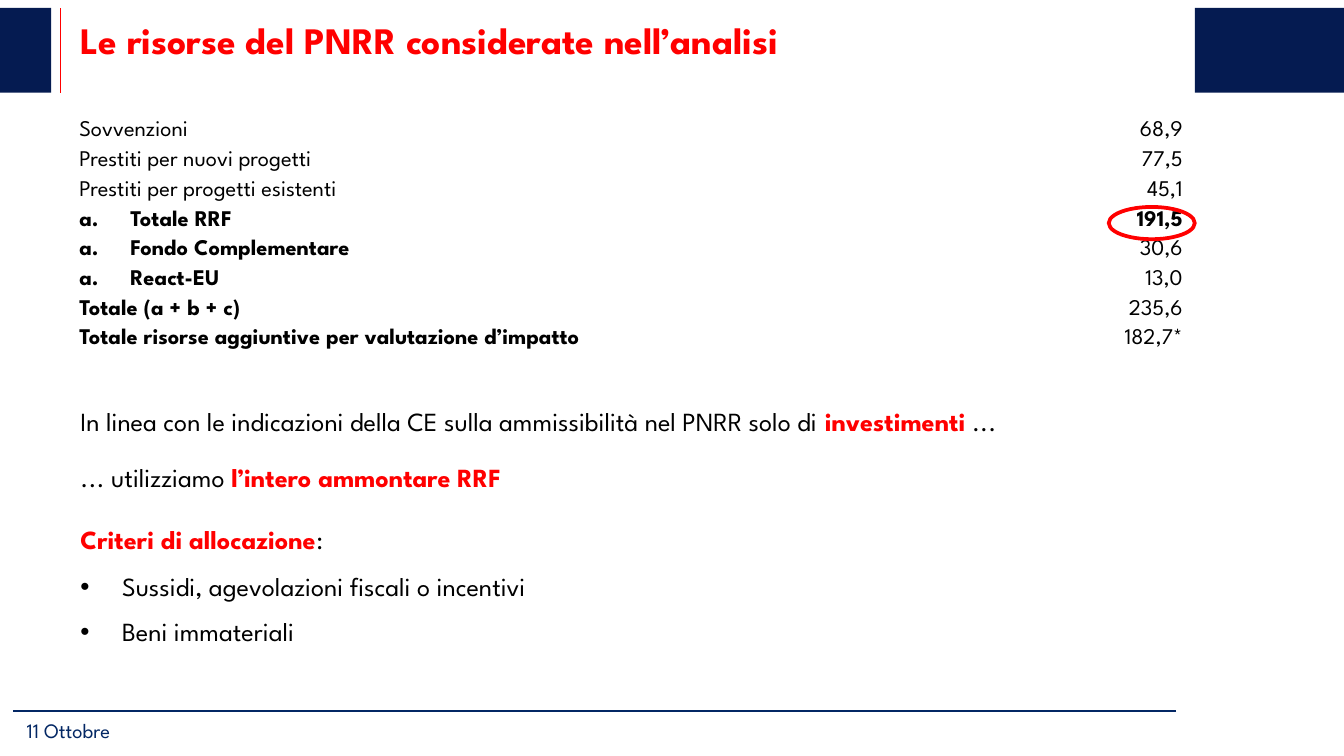
from dataclasses import dataclass

from lxml.etree import SubElement
from pptx import Presentation
from pptx.dml.color import RGBColor
from pptx.enum.shapes import MSO_CONNECTOR as CONN, MSO_SHAPE as SHAPE
from pptx.enum.text import MSO_ANCHOR as ANCHOR, PP_ALIGN as ALIGN
from pptx.oxml.ns import qn
from pptx.util import Inches, Pt


@dataclass(frozen=True)
class Theme:
    font: str = "League Spartan"
    bullet_font: str = "Arial"
    red: str = "FF0000"
    navy: str = "051B51"
    blue: str = "032764"
    black: str = "000000"
    title: int = 20
    body: int = 14
    table: int = 12
    footer: int = 11


T = Theme()


def write(p, runs, size):
    for text, color, bold in runs:
        r = p.add_run()
        r.text = text
        for name, value in {"name": T.font, "size": Pt(size), "bold": bold}.items():
            setattr(r.font, name, value)
        r.font.color.rgb = RGBColor.from_string(color)


def add_bullet(p, indent, font, tag, **attrs):
    pPr = p._p.get_or_add_pPr()
    pPr.set("marL", str(Inches(indent)))
    pPr.set("indent", str(-Inches(indent)))
    SubElement(pPr, qn("a:buFont"), typeface=font)
    SubElement(pPr, qn(tag), **attrs)


prs = Presentation()
prs.slide_width, prs.slide_height = Inches(10), Inches(10 * 9 / 16)
s = prs.slides.add_slide(prs.slide_layouts[6])

for left, width in [(8.89, 1.12), (0, 0.38)]:
    sp = s.shapes.add_shape(SHAPE.RECTANGLE, Inches(left), Inches(0.06), Inches(width), Inches(0.63))
    sp.shadow.inherit = False
    sp.fill.solid()
    sp.fill.fore_color.rgb = RGBColor.from_string(T.navy)
    sp.line.fill.background()

for x1, y1, x2, y2, color, width in [
    (0.45, 0.06, 0.45, 0.69, T.red, 1),
    (8.75, 5.29, 0.1, 5.29, T.blue, 1),
]:
    line = s.shapes.add_connector(CONN.STRAIGHT, Inches(x1), Inches(y1), Inches(x2), Inches(y2))
    line.line.color.rgb = RGBColor.from_string(color)
    line.line.width = Pt(width)
    SubElement(line._element.spPr, qn("a:effectLst"))

rows = [
    ("Sovvenzioni", "68,9"),
    ("Prestiti per nuovi progetti", "77,5"),
    ("Prestiti per progetti esistenti", "45,1"),
    ("Totale RRF", "191,5"),
    ("Fondo Complementare", "30,6"),
    ("React-EU", "13,0"),
    ("Totale (a + b + c)", "235,6"),
    ("Totale risorse aggiuntive per valutazione d’impatto", "182,7*"),
]
lettered = range(3, 6)
table = s.shapes.add_table(len(rows), 2, Inches(0.5), Inches(0.88), Inches(8.39), Inches(1.77)).table
table.first_row = table.horz_banding = False
table.columns[0].width, table.columns[1].width = Inches(4.38), Inches(4.01)
cell_format = {
    "margin_left": Inches(0.09), "margin_right": Inches(0.09),
    "margin_top": 0, "margin_bottom": 0, "vertical_anchor": ANCHOR.TOP,
}
for i, row in enumerate(rows):
    table.rows[i].height = Inches(1.77 / len(rows))
    for j, text in enumerate(row):
        cell = table.cell(i, j)
        cell.fill.background()
        for name, value in cell_format.items():
            setattr(cell, name, value)
        p = cell.text_frame.paragraphs[0]
        p.alignment = ALIGN.RIGHT if j else ALIGN.LEFT
        p.line_spacing = 1.15
        if j == 0 and i in lettered:
            add_bullet(p, 0.38, T.font, "a:buAutoNum", type="alphaLcPeriod")
        bold = i == 3 if j else i >= 3
        write(p, [(text, T.black, bold)], T.table)

sp = s.shapes.add_shape(SHAPE.OVAL, Inches(8.25), Inches(1.54), Inches(0.64), Inches(0.24))
sp.shadow.inherit = False
sp.fill.background()
sp.line.color.rgb = RGBColor.from_string(T.red)
sp.line.width = Pt(2)

title = [(0, False, [("Le risorse del PNRR considerate nell’analisi", T.red, True)])]
footer = [(0, False, [("11 Ottobre", T.blue, False)])]
body = [
    (0, False, [
        ("In linea con le indicazioni della CE sulla ammissibilità nel PNRR solo di ", T.black, False),
        ("investimenti", T.red, True),
        (" ...", T.black, False),
    ]),
    (13, False, [("... utilizziamo ", T.black, False), ("l’intero ammontare RRF", T.red, True)]),
    (16.5, False, [("Criteri di allocazione", T.red, True), (":", T.black, False)]),
    (8.5, True, [("Sussidi, agevolazioni fiscali o incentivi", T.black, False)]),
    (7, True, [("Beni immateriali", T.black, False)]),
]
for left, top, width, height, size, paragraphs in [
    (0.5, 0.08, 8.08, 0.6, T.title, title),
    (0.1, 5.29, 8.78, 0.34, T.footer, footer),
    (0.5, 2.97, 8.39, 1.97, T.body, body),
]:
    tf = s.shapes.add_textbox(Inches(left), Inches(top), Inches(width), Inches(height)).text_frame
    tf.word_wrap = True
    for i, (gap, bulleted, runs) in enumerate(paragraphs):
        p = tf.add_paragraph() if i else tf.paragraphs[0]
        if gap:
            p.space_before = Pt(gap)
        if bulleted:
            add_bullet(p, 0.31, T.bullet_font, "a:buChar", char="•")
        write(p, runs, size)

prs.save("out.pptx")
